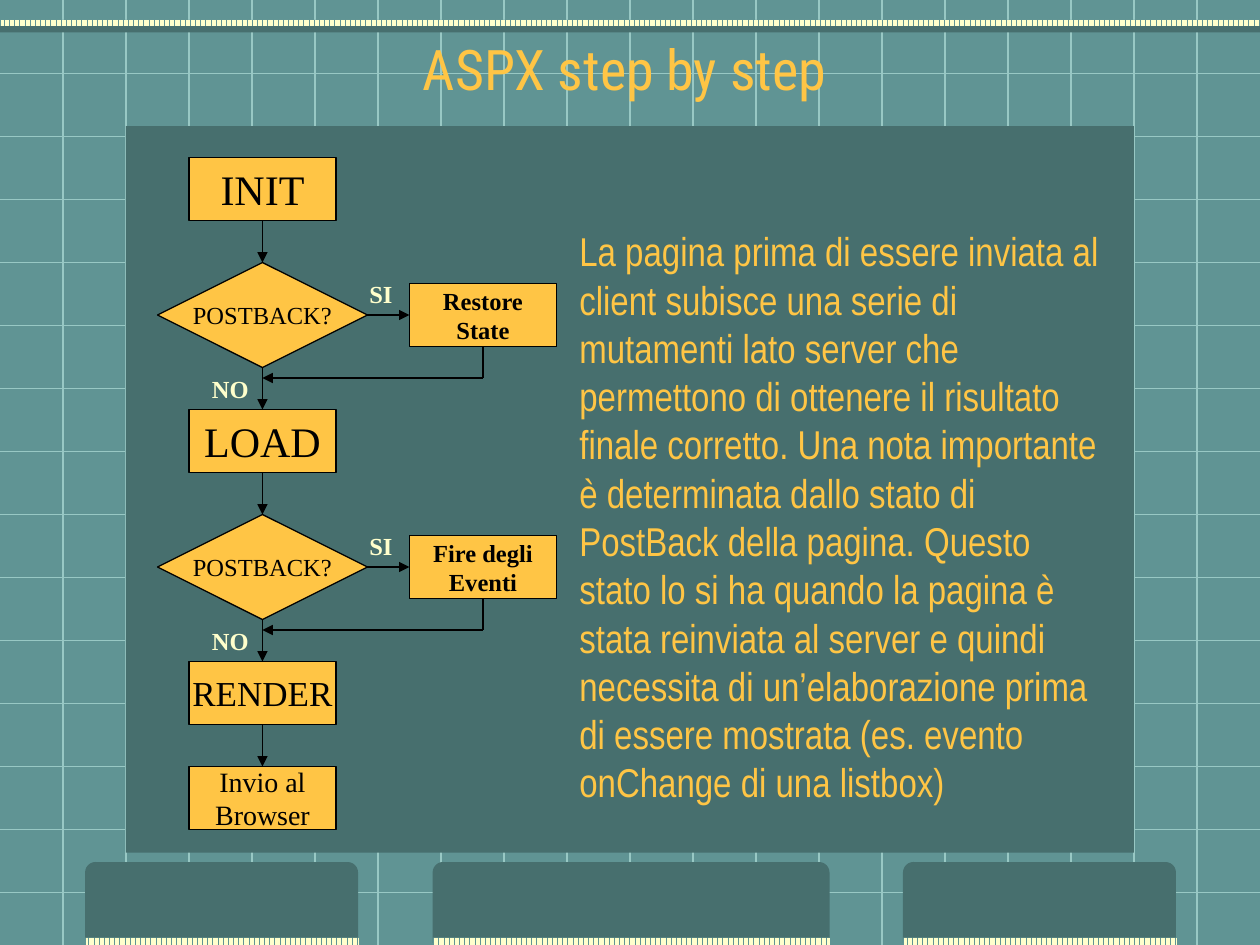
from lxml.etree import SubElement as Sub
from pptx import Presentation
from pptx.dml.color import RGBColor as RGB
from pptx.enum.dml import MSO_PATTERN as Pat
from pptx.enum.shapes import MSO_CONNECTOR as Con, MSO_SHAPE as Kind
from pptx.enum.text import MSO_ANCHOR as Anc, PP_ALIGN as Al
from pptx.oxml.ns import qn
from pptx.util import Emu, Pt

SCALE = 7620  # EMU per px, 120 px to the inch
WIDE, HIGH = 1200, 900
MID = 250  # axis of the main flow
COL = {
    "back": "609494", "grid": "98C8C4", "panel": "476F6E",
    "gold": "FFC545", "cream": "FFFFCC", "ink": "000000",
}
SERIF = "Times New Roman"
BODY = (
    "La pagina prima di essere inviata al client subisce una serie di "
    "mutamenti lato server che permettono di ottenere il risultato finale "
    "corretto. Una nota importante è determinata dallo stato di PostBack "
    "della pagina. Questo stato lo si ha quando la pagina è stata reinviata "
    "al server e quindi necessita di un’elaborazione prima di essere "
    "mostrata (es. evento onChange di una listbox)"
)


def px(*vals):
    return [Emu(v * SCALE) for v in vals]


def rgb(name):
    return RGB.from_string(COL[name])


def write(frame, text, size, face, tone, bold=False, align=Al.LEFT):
    frame.text = text
    for para in frame.paragraphs:
        para.alignment = align
        font = para.font
        font.size, font.name, font.bold = Pt(size), face, bold
        font.color.rgb = rgb(tone)


def add_block(slide, kind, box, tone):
    shape = slide.shapes.add_shape(kind, *px(*box))
    shape.shadow.inherit = False
    shape.fill.solid()
    shape.fill.fore_color.rgb = rgb(tone)
    shape.line.fill.background()
    return shape


def add_strip(slide, box):
    fill = add_block(slide, Kind.RECTANGLE, box, "cream").fill
    fill.patterned()
    fill.pattern = Pat.DARK_VERTICAL
    fill.fore_color.rgb = rgb("cream")
    fill.back_color.rgb = rgb("back")


def add_node(slide, kind, box, text, size, bold=False):
    node = add_block(slide, kind, box, "gold")
    node.line.color.rgb = rgb("ink")
    node.line.width = Pt(0.75)
    frame = node.text_frame
    frame.word_wrap = False
    frame.vertical_anchor = Anc.MIDDLE
    write(frame, text, size, SERIF, "ink", bold, Al.CENTER)
    return node


def add_line(slide, ends, tone="ink", arrow=False):
    line = slide.shapes.add_connector(Con.STRAIGHT, *px(*ends))
    line.line.color.rgb = rgb(tone)
    line.line.width = Pt(0.75)
    props = line._element.spPr
    if arrow:
        Sub(props.find(qn("a:ln")), qn("a:tailEnd"), type="triangle")
    Sub(props, qn("a:effectLst"))
    return line


def add_link(slide, start, out, end, into):
    line = add_line(slide, (0, 0, 0, 0), arrow=True)
    line.begin_connect(start, out)
    line.end_connect(end, into)


def add_text(slide, box, *style, **more):
    frame = slide.shapes.add_textbox(*px(*box)).text_frame
    frame.word_wrap = True
    write(frame, *style, **more)
    return frame


def add_title(slide):
    frame = add_text(slide, (70, 30, 1050, 70), "ASPX step by step", 32,
                     "Roboto Condensed", "gold", align=Al.CENTER)
    frame.vertical_anchor = Anc.MIDDLE
    # Text shadow
    props = frame.paragraphs[0].runs[0]._r.get_or_add_rPr()
    shade = Sub(Sub(props, qn("a:effectLst")), qn("a:outerShdw"),
                dist="35921", dir="2700000")
    Sub(shade, qn("a:srgbClr"), val=COL["panel"])


def add_frame(slide):
    # Background grid
    for x in range(60, WIDE, 60):
        add_line(slide, (x, 0, x, HIGH), "grid")
    for y in range(70, HIGH, 60):
        add_line(slide, (0, y, WIDE, y), "grid")
    # Bottom tabs
    for x, w in ((81, 260), (412, 378), (860, 260)):
        tab = add_block(slide, Kind.ROUND_2_SAME_RECTANGLE,
                        (x, 821, w, 77), "panel")
        tab.adjustments[0] = 0.13
        add_strip(slide, (x, 893, w, 7))
    # Top band
    add_strip(slide, (0, 19, WIDE, 6))
    add_block(slide, Kind.RECTANGLE, (0, 25, WIDE, 6), "panel")


def add_step(slide, y, text, size):
    return add_node(slide, Kind.FLOWCHART_PROCESS,
                    (MID - 70, y, 140, 60), text, size)


def add_test(slide, prev, y, text, after):
    """Postback test at y, with its side step, leading on to after."""
    test = add_node(slide, Kind.FLOWCHART_DECISION,
                    (MID - 100, y, 200, 100), "POSTBACK?", 14)
    side = add_node(slide, Kind.FLOWCHART_PROCESS,
                    (390, y + 20, 140, 60), text, 14, True)
    add_link(slide, prev, 2, test, 0)
    add_link(slide, test, 3, side, 1)
    add_link(slide, test, 2, after, 0)
    # Way back to the main flow
    drop = add_line(slide, (460, y + 80, 460, y + 110))
    drop.begin_connect(side, 2)
    add_line(slide, (460, y + 110, MID, y + 110), arrow=True)
    # Answers
    for box, word in (((340, y + 10, 50, 40), "SI"),
                      ((190, y + 100, 60, 40), "NO")):
        add_text(slide, box, word, 14, SERIF, "cream", bold=True)


def main():
    deck = Presentation()
    deck.slide_width, deck.slide_height = px(WIDE, HIGH)
    slide = deck.slides.add_slide(deck.slide_layouts[6])
    back = slide.background.fill
    back.solid()
    back.fore_color.rgb = rgb("back")

    add_frame(slide)
    add_title(slide)
    add_block(slide, Kind.RECTANGLE, (120, 120, 960, 692), "panel")

    # Flow chart
    init = add_step(slide, 150, "INIT", 24)
    load = add_step(slide, 390, "LOAD", 24)
    render = add_step(slide, 630, "RENDER", 20)
    send = add_step(slide, 730, "Invio al\nBrowser", 16)
    add_test(slide, init, 250, "Restore\nState", load)
    add_test(slide, load, 490, "Fire degli\nEventi", render)
    add_link(slide, render, 2, send, 0)

    # Explanation
    add_text(slide, (540, 210, 530, 564), BODY, 23, "Arial Narrow", "gold")
    deck.save("out.pptx")


if __name__ == "__main__":
    main()
